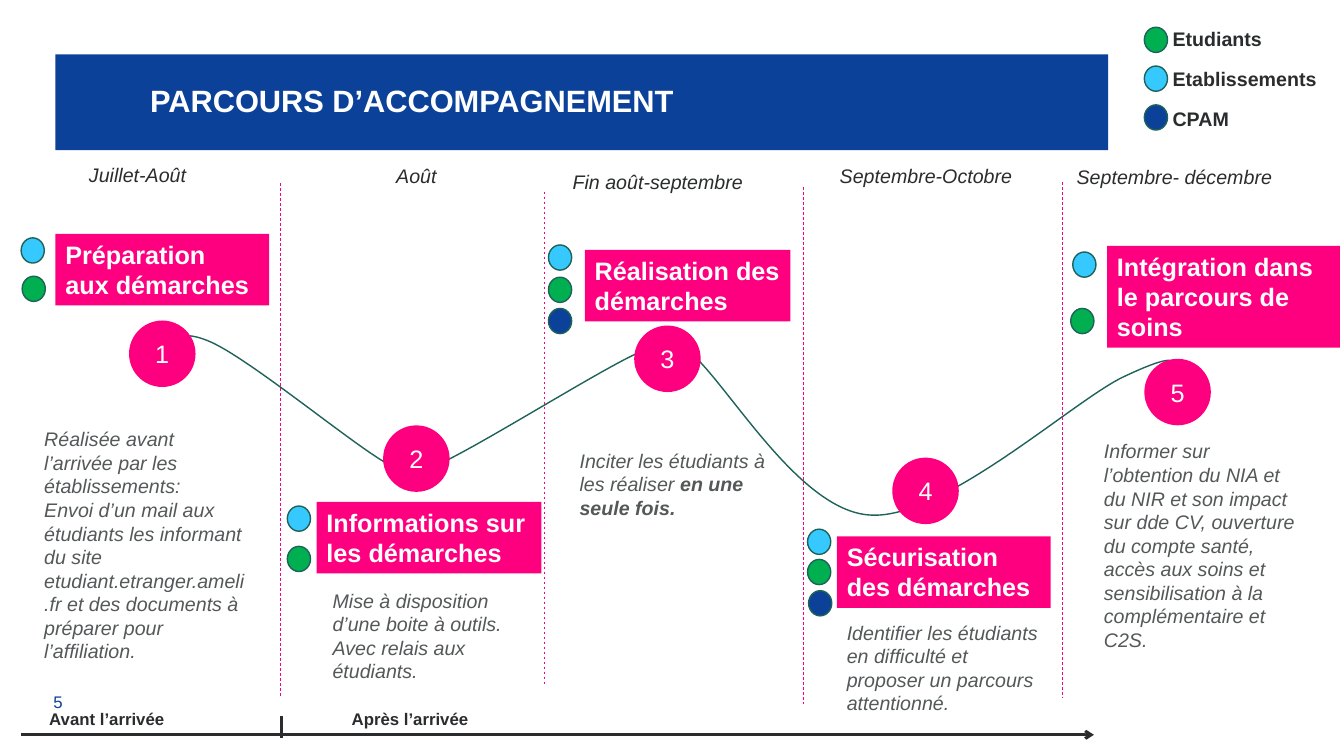
import pptx
import pptx.util
import pptx.dml.color
import pptx.enum.dml
import pptx.enum.shapes
import pptx.enum.text
import lxml.etree
from dataclasses import dataclass


@dataclass(frozen=True)
class Theme:
    font: str = "Arial"
    blue: str = "0C419A"
    pink: str = "FE007F"
    green: str = "00B050"
    sky: str = "35C9FF"
    teal: str = "1E6259"
    white: str = "FFFFFF"
    dark: str = "2A2C2D"
    grey: str = "545859"
    title_size: int = 22
    heading_size: int = 18
    body_size: int = 14
    small_size: int = 12


THEME = Theme()
STUDENTS, SCHOOLS, INSURANCE = "Etudiants", "Etablissements", "CPAM"
ACTOR_COLORS = {STUDENTS: THEME.green, SCHOOLS: THEME.sky, INSURANCE: THEME.blue}
LEGEND_BOX = (11.21, 0.21, 2.07, 1.14)
LEGEND_DOTS = (11.35, 0.27, 0.385)
DOT_WIDTH, DOT_HEIGHT = 0.23, 0.25
NUMBER_DIAMETER = 0.66

TITLE = "PARCOURS D’ACCOMPAGNEMENT"
STEPS = [
    {
        "heading": ["Préparation", "aux démarches"],
        "heading_box": (0.55, 2.32, 2.12, 0.71),
        "number_at": (1.28, 3.18),
        "description": [
            "Réalisée avant l’arrivée par les établissements:",
            "Envoi d’un mail aux étudiants les informant du site "
            "etudiant.etranger.ameli.fr et des documents à préparer pour l’affiliation.",
        ],
        "description_box": (0.34, 4.19, 2.22, 2.22),
        "actors": [(SCHOOLS, 0.21, 2.36), (STUDENTS, 0.22, 2.74)],
    },
    {
        "heading": ["Informations sur les démarches"],
        "heading_box": (3.14, 4.98, 2.23, 0.71),
        "number_at": (3.8, 4.22),
        "description": ["Mise à disposition d’une boite à outils.", "Avec relais aux étudiants."],
        "description_box": (3.2, 5.79, 2.12, 1.04),
        "actors": [(SCHOOLS, 2.85, 5.02), (STUDENTS, 2.85, 5.42)],
    },
    {
        "heading": ["Réalisation des démarches"],
        "heading_box": (5.8, 2.48, 2.04, 0.71),
        "number_at": (6.29, 3.23),
        "description": ["Inciter les étudiants à les réaliser "],
        "emphasis": "en une seule fois.",
        "description_box": (5.65, 4.4, 2.12, 0.81),
        "actors": [(SCHOOLS, 5.44, 2.43), (STUDENTS, 5.44, 2.75), (INSURANCE, 5.44, 3.06)],
    },
    {
        "heading": ["Sécurisation", "des démarches"],
        "heading_box": (8.3, 5.32, 2.12, 0.71),
        "number_at": (8.85, 4.54),
        "description": ["Identifier les étudiants en difficulté et proposer un parcours attentionné."],
        "description_box": (8.3, 6.11, 2.12, 1.04),
        "actors": [(SCHOOLS, 8.01, 5.25), (STUDENTS, 8.01, 5.55), (INSURANCE, 8.02, 5.86)],
    },
    {
        "heading": ["Intégration dans le parcours de soins"],
        "heading_box": (10.98, 2.44, 2.31, 1.01),
        "number_at": (11.35, 3.56),
        "description": [
            "Informer sur l’obtention du NIA et du NIR et son impact sur dde CV, ouverture "
            "du compte santé, accès aux soins et sensibilisation à la complémentaire et C2S."
        ],
        "description_box": (10.85, 4.31, 2.12, 2.22),
        "actors": [(SCHOOLS, 10.64, 2.5), (STUDENTS, 10.62, 3.06)],
    },
]
PERIODS = [
    ("Juillet-Août", (0.11, 1.57, 2.51, 0.34), "CENTER"),
    ("Août", (2.97, 1.58, 2.32, 0.34), "CENTER"),
    ("Fin août-septembre", (5.51, 1.64, 2.03, 0.34), "CENTER"),
    ("Septembre-Octobre", (8.17, 1.58, 2.03, 0.34), "CENTER"),
    ("Septembre- décembre", (10.58, 1.59, 2.51, 0.57), "LEFT"),
]
DIVIDERS = [(2.78, 1.82, 6.92), (5.4, 1.9, 6.79), (7.97, 1.86, 6.98), (10.54, 1.81, 6.92)]
CURVE_BOX = (1.6, 3.31, 10.05, 1.81)
CURVE_START = (1.6, 3.68)
CURVE_SEGMENTS = [
    ((1.64, 3.45), (1.69, 3.23), (2.06, 3.38)),
    ((2.44, 3.53), (3.47, 4.39), (3.84, 4.6)),
    ((4.22, 4.81), (3.91, 4.81), (4.32, 4.62)),
    ((4.73, 4.44), (5.9, 3.7), (6.31, 3.51)),
    ((6.72, 3.31), (6.41, 3.19), (6.8, 3.46)),
    ((7.18, 3.73), (7.9, 5.07), (8.63, 5.11)),
    ((9.35, 5.16), (10.64, 3.98), (11.14, 3.74)),
    ((11.65, 3.5), (11.65, 3.57), (11.65, 3.65)),
]

Inches = pptx.util.Inches
SHAPES = pptx.enum.shapes.MSO_SHAPE
ALIGN = pptx.enum.text.PP_ALIGN
MIDDLE = pptx.enum.text.MSO_ANCHOR.MIDDLE
TOP = pptx.enum.text.MSO_ANCHOR.TOP


def rgb(color):
    return pptx.dml.color.RGBColor.from_string(color)


def add_element(parent, tag, **attributes):
    return lxml.etree.SubElement(parent, pptx.oxml.ns.qn(tag), **attributes)


def style_run(run, size, color, bold=False, italic=False):
    run.font.name = THEME.font
    run.font.size = pptx.util.Pt(size)
    run.font.color.rgb = rgb(color)
    run.font.bold = bold
    run.font.italic = italic


def write(shape, lines, size, color, align=ALIGN.LEFT, anchor=TOP, **style):
    frame = shape.text_frame
    frame.word_wrap = True
    frame.vertical_anchor = anchor
    frame.text = "\n".join(lines)
    for paragraph in frame.paragraphs:
        paragraph.alignment = align
        for run in paragraph.runs:
            style_run(run, size, color, **style)
    return frame


def add_filled(slide, kind, box, fill, outline=None):
    shape = slide.shapes.add_shape(kind, *map(Inches, box))
    shape.shadow.inherit = False
    shape.fill.solid()
    shape.fill.fore_color.rgb = rgb(fill)
    if outline:
        shape.line.color.rgb = rgb(outline)
        shape.line.width = pptx.util.Pt(1)
    else:
        shape.line.fill.background()
    return shape


def add_text(slide, box, lines, size, color, **style):
    return write(slide.shapes.add_textbox(*map(Inches, box)), lines, size, color, **style)


def add_dot(slide, actor, left, top):
    add_filled(slide, SHAPES.OVAL, (left, top, DOT_WIDTH, DOT_HEIGHT), ACTOR_COLORS[actor], THEME.teal)


def add_line(slide, start, end, color, width):
    straight = pptx.enum.shapes.MSO_CONNECTOR.STRAIGHT
    line = slide.shapes.add_connector(straight, *map(Inches, start + end))
    line.line.color.rgb = rgb(color)
    line.line.width = pptx.util.Pt(width)
    add_element(line._element.spPr, "a:effectLst")
    return line


def add_curve(slide):
    left, top, width, height = map(Inches, CURVE_BOX)
    builder = slide.shapes.build_freeform(left, top)
    builder.add_line_segments([(left + width, top + height)], close=False)
    curve = builder.convert_to_shape()
    outline = next(curve._element.iter(pptx.oxml.ns.qn("a:path")))
    for child in list(outline):
        outline.remove(child)
    for tag, points in [("a:moveTo", [CURVE_START])] + [("a:cubicBezTo", points) for points in CURVE_SEGMENTS]:
        command = add_element(outline, tag)
        for x, y in points:
            add_element(command, "a:pt", x=str(Inches(x) - left), y=str(Inches(y) - top))
    curve.shadow.inherit = False
    curve.fill.background()
    curve.line.color.rgb = rgb(THEME.teal)
    curve.line.width = pptx.util.Pt(1)


def add_steps(slide):
    for step in STEPS:
        heading = add_filled(slide, SHAPES.RECTANGLE, step["heading_box"], THEME.pink)
        write(heading, step["heading"], THEME.heading_size, THEME.white, bold=True)
        frame = add_text(slide, step["description_box"], step["description"], THEME.body_size, THEME.grey, italic=True)
        if "emphasis" in step:
            run = frame.paragraphs[-1].add_run()
            run.text = step["emphasis"]
            style_run(run, THEME.body_size, THEME.grey, bold=True, italic=True)
    add_curve(slide)
    for number, step in enumerate(STEPS, 1):
        box = step["number_at"] + (NUMBER_DIAMETER, NUMBER_DIAMETER)
        circle = add_filled(slide, SHAPES.OVAL, box, THEME.pink)
        write(circle, [str(number)], THEME.heading_size, THEME.white, ALIGN.CENTER, MIDDLE)
        for actor in step["actors"]:
            add_dot(slide, *actor)


def add_legend(slide):
    legend = add_filled(slide, SHAPES.RECTANGLE, LEGEND_BOX, THEME.white)
    frame = write(legend, list(ACTOR_COLORS), THEME.body_size, THEME.dark, bold=True)
    frame.margin_left, frame.margin_top, frame.margin_right = Inches(0.42), Inches(0.06), 0
    for paragraph in frame.paragraphs[1:]:
        paragraph.space_before = pptx.util.Pt(11.5)
    left, top, pitch = LEGEND_DOTS
    for index, actor in enumerate(ACTOR_COLORS):
        add_dot(slide, actor, left, top + index * pitch)


def add_timeline(slide):
    labels = add_text(slide, (0.39, 6.98, 10.83, 0.3), ["Avant l’arrivée\tAprès l’arrivée"],
                      THEME.small_size, THEME.dark, bold=True)
    tabs = add_element(labels.paragraphs[0]._p.get_or_add_pPr(), "a:tabLst")
    add_element(tabs, "a:tab", pos=str(Inches(3)), algn="l")
    arrow = add_line(slide, (0.21, 7.29), (10.85, 7.29), THEME.dark, 2)
    add_element(arrow.line._get_or_add_ln(), "a:tailEnd", type="arrow")
    add_line(slide, (2.79, 7.1), (2.79, 7.32), THEME.dark, 2)


def main():
    presentation = pptx.Presentation()
    presentation.slide_width, presentation.slide_height = Inches(13.33), Inches(7.5)
    slide = presentation.slides.add_slide(presentation.slide_layouts[6])
    add_text(slide, (0.43, 6.81, 0.79, 0.31), ["5"], THEME.small_size, THEME.blue, anchor=MIDDLE)
    banner = add_filled(slide, SHAPES.RECTANGLE, (0.55, 0.54, 10.44, 0.95), THEME.blue)
    title = write(banner, [TITLE], THEME.title_size, THEME.white, anchor=MIDDLE, bold=True)
    title.margin_left = Inches(0.94)
    title.paragraphs[0].line_spacing = 0.9
    add_steps(slide)
    for left, top, bottom in DIVIDERS:
        divider = add_line(slide, (left, top), (left, bottom), THEME.pink, 0.5)
        divider.line.dash_style = pptx.enum.dml.MSO_LINE.DASH
    for period, box, align in PERIODS:
        add_text(slide, box, [period], THEME.body_size, THEME.dark, align=ALIGN[align], italic=True)
    add_legend(slide)
    add_timeline(slide)
    presentation.save("out.pptx")


if __name__ == "__main__":
    main()
